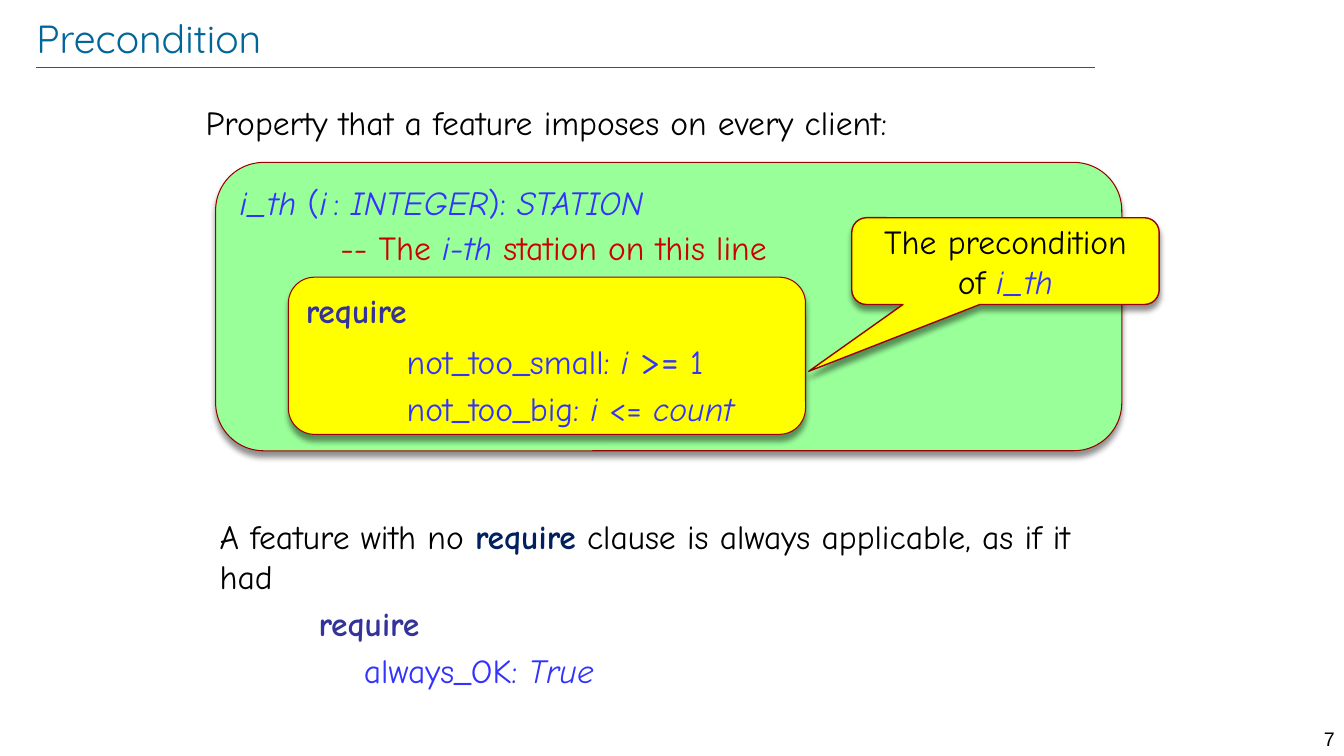
"""Build the slide that explains the precondition of a feature."""
from lxml.etree import SubElement
from pptx import Presentation
from pptx.dml.color import RGBColor as RGB
from pptx.enum.shapes import MSO_CONNECTOR as LINE, MSO_SHAPE as SHAPE
from pptx.enum.text import MSO_ANCHOR as ANCHOR, MSO_AUTO_SIZE as FIT, PP_ALIGN as ALIGN
from pptx.oxml.ns import qn
from pptx.util import Pt

THEME = {
    "colors": {"teal": "006699", "black": "000000", "blue": "3333FF", "indigo": "333399",
               "navy": "002060", "red": "CC0000", "green": "99FF99", "yellow": "FFFF00",
               "edge": "990000"},
    "styles": {
        "title": ("teal", {"name": "Quicksand", "size": Pt(28)}),
        "number": ("black", {"name": "Arial", "size": Pt(14)}),
        "text": ("black", {}),
        "code": ("blue", {}),
        "name": ("blue", {"italic": True}),
        "gap": ("blue", {"italic": True, "size": Pt(14)}),
        "sign": ("blue", {"size": Pt(28)}),
        "comment": ("red", {}),
        "keyword": ("indigo", {"bold": True}),
        "clause": ("navy", {"bold": True}),
    },
    "base": {"name": "Comic Neue", "size": Pt(24), "bold": False, "italic": False},
}
COLORS = {name: RGB.from_string(value) for name, value in THEME["colors"].items()}


def write(sp, paras, align=ALIGN.LEFT, anchor=ANCHOR.TOP, before=4, margins=(7.2, 3.6)):
    """Fill a shape with paragraphs, each an indent followed by its runs."""
    tf = sp.text_frame
    x, y = map(Pt, margins)
    frame = {"word_wrap": True, "auto_size": FIT.NONE, "vertical_anchor": anchor,
             "margin_left": x, "margin_right": x, "margin_top": y, "margin_bottom": y}
    for key, value in frame.items():
        setattr(tf, key, value)
    for i, (indent, *runs) in enumerate(paras):
        p = tf.add_paragraph() if i else tf.paragraphs[0]
        p.alignment, p.space_before = align, Pt(before)
        pPr = p._p.get_or_add_pPr()
        pPr.set("marL", str(Pt(indent)))
        pPr.set("indent", "0")
        SubElement(pPr, qn("a:buNone"))
        for text, style in runs:
            if text == "\n":
                p.add_line_break()
                continue
            r = p.add_run()
            r.text = text
            color, changes = THEME["styles"][style]
            for key, value in {**THEME["base"], **changes}.items():
                setattr(r.font, key, value)
            r.font.color.rgb = COLORS[color]


def add_panel(kind, box, fill, width):
    """Add a filled outline shape with a soft shadow below it."""
    sp = s.shapes.add_shape(kind, *map(Pt, box))
    sp.fill.solid()
    sp.fill.fore_color.rgb = COLORS[fill]
    sp.line.color.rgb = COLORS["edge"]
    sp.line.width = Pt(width)
    sp.shadow.inherit = False
    shadow = SubElement(sp._element.spPr.find(qn("a:effectLst")), qn("a:outerShdw"),
                        blurRad=str(Pt(4)), dist=str(Pt(4)), dir="5400000", rotWithShape="0")
    color = SubElement(shadow, qn("a:srgbClr"), val=THEME["colors"]["black"])
    SubElement(color, qn("a:alpha"), val="43000")
    return sp


prs = Presentation()
prs.slide_width, prs.slide_height = Pt(960), Pt(540)
s = prs.slides.add_slide(prs.slide_layouts[1])
title, body = s.placeholders

rule = s.shapes.add_connector(LINE.STRAIGHT, Pt(26), Pt(48.3), Pt(782), Pt(48.3))
rule.line.color.rgb = COLORS["teal"]
rule.line.width = Pt(0.25)
SubElement(rule._element.spPr, qn("a:effectLst"))

for sp, box in ((title, (26, 9.5, 834, 34.5)), (body, (139.7, 69, 677, 265.7))):
    sp.left, sp.top, sp.width, sp.height = map(Pt, box)
write(title, [(0, ("Precondition", "title"))], anchor=ANCHOR.MIDDLE, before=0, margins=(0, 0))
write(body, [(0, ("Property that a feature imposes on every client:", "text"))], before=4.8)

feature = add_panel(SHAPE.ROUNDED_RECTANGLE, (154, 116, 647.3, 206), "green", 0.75)
write(feature, [
    (0, ("i_th", "name"), (" (", "code"), ("i", "name"), (" ", "gap"), (": ", "code"),
     ("INTEGER", "name"), ("): ", "code"), ("STATION", "name")),
    (72, ("-- The ", "comment"), ("i-th ", "name"), ("station on this line", "comment")),
])

require = add_panel(SHAPE.ROUNDED_RECTANGLE, (206, 198, 369.4, 112.3), "yellow", 0.75)
write(require, [
    (0, ("require", "keyword")),
    (72, ("not_too_small: ", "code"), ("i ", "name"), (">=", "sign"), (" 1", "code")),
    (72, ("not_too_big: ", "code"), ("i ", "name"), ("<= ", "code"), ("count", "name")),
])

callout = add_panel(SHAPE.ROUNDED_RECTANGULAR_CALLOUT, (608.4, 155.5, 219.6, 62), "yellow", 1)
for i, value in enumerate((-0.64, 1.27, 0.17)):
    callout.adjustments[i] = value
write(callout, [(0, ("The precondition", "text"), ("\n", "text"), ("of ", "text"),
                 ("i_th", "name"))],
      align=ALIGN.CENTER, anchor=ANCHOR.MIDDLE, before=0, margins=(0, 3.6))

default = s.shapes.add_textbox(*map(Pt, (149.8, 365, 655, 135.4)))
write(default, [
    (0, ("A feature with no ", "text"), ("require", "clause"),
     (" clause is always applicable, as if it had", "text")),
    (70.6, ("require", "keyword")),
    (103, ("always_OK:", "code"), (" True", "name")),
], before=4.8)

number = s.shapes.add_textbox(*map(Pt, (907.2, 515.5, 53.3, 17.3)))
write(number, [(0, ("7", "number"))], align=ALIGN.RIGHT, before=0)

prs.save("out.pptx")
